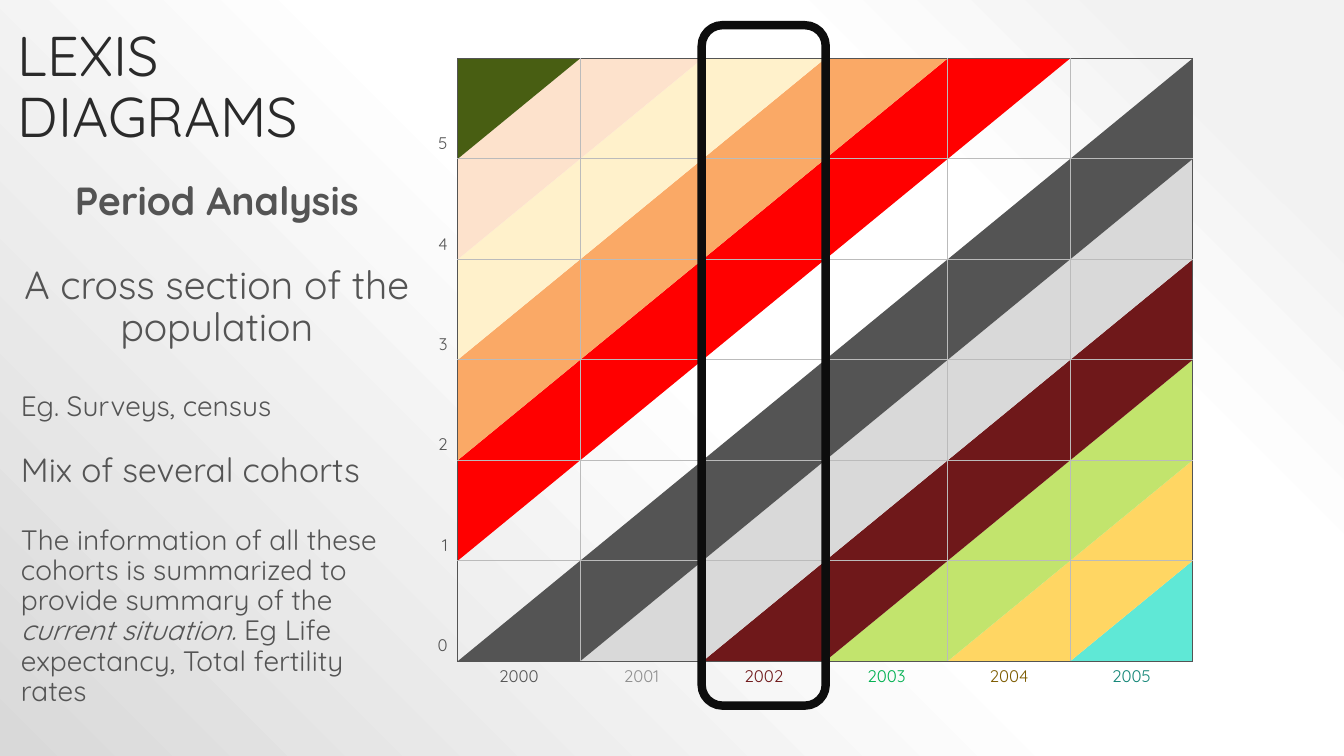
"""Build the Lexis diagram slide on period analysis."""
import lxml.etree
import pptx
import pptx.dml.color
import pptx.enum.shapes
import pptx.enum.text
import pptx.oxml
import pptx.oxml.ns
import pptx.util

Inches, Pt = pptx.util.Inches, pptx.util.Pt
RGBColor = pptx.dml.color.RGBColor
ALIGN, ANCHOR = pptx.enum.text.PP_ALIGN, pptx.enum.text.MSO_ANCHOR
SHAPE = pptx.enum.shapes.MSO_SHAPE
qn = pptx.oxml.ns.qn

FONT = "Quicksand"
INK = RGBColor(0x2A, 0x2A, 0x2A)
GREY = RGBColor(0x54, 0x54, 0x54)
LIGHT = RGBColor(0xBB, 0xBB, 0xBB)
SILVER = RGBColor(0x8F, 0x8F, 0x8F)
PALE = RGBColor(0xD9, 0xD9, 0xD9)
MAROON = RGBColor(0x6F, 0x18, 0x1A)
GREEN = RGBColor(0x00, 0xB0, 0x50)
BROWN = RGBColor(0x7D, 0x5C, 0x00)
TEAL = RGBColor(0x13, 0x86, 0x77)
LIME = RGBColor(0xC2, 0xE4, 0x6D)
YELLOW = RGBColor(0xFF, 0xD6, 0x63)
AQUA = RGBColor(0x5F, 0xE8, 0xD6)
RED = RGBColor(0xFF, 0x00, 0x00)
ORANGE = RGBColor(0xFA, 0xA9, 0x66)
CREAM = RGBColor(0xFF, 0xF1, 0xCB)
PEACH = RGBColor(0xFD, 0xE2, 0xCC)
OLIVE = RGBColor(0x48, 0x5E, 0x12)
BLACK = RGBColor(0x0D, 0x0D, 0x0D)

TITLE = ["LEXIS ", "DIAGRAMS"]
POINTS = [
    (["Period Analysis"], 28, 0, ALIGN.CENTER),
    (["A cross section of the population"], 28, 30, ALIGN.CENTER),
    (["Eg. Surveys, census"], 20, 30, ALIGN.LEFT),
    (["Mix of several cohorts"], 24, 22, ALIGN.LEFT),
    (["The information of all these cohorts is summarized to provide summary of the ",
      "current situation. ", "Eg Life expectancy, Total fertility rates"],
     20, 26, ALIGN.LEFT),
]
YEARS = [("2000", GREY), ("2001", SILVER), ("2002", MAROON),
         ("2003", GREEN), ("2004", BROWN), ("2005", TEAL)]
AGES = ["5", "4", "3", "2", "1", "0"]
COHORTS = {-6: OLIVE, -5: PEACH, -4: CREAM, -3: ORANGE, -2: RED, 0: GREY,
           1: PALE, 2: MAROON, 3: LIME, 4: YELLOW, 5: AQUA}
BACKDROP = [(10, "F2F2F2"), (28, "FFFFFF"), (48, "FFFFFF"), (100, "D9D9D9")]

TABLE_LEFT, GRID_LEFT, GRID_TOP = Inches(4.08), Inches(4.54), Inches(0.58)
YEAR_WIDTH = Inches(7.29) // len(YEARS)
AGE_HEIGHT = Inches(5.98) // len(AGES)
YEAR_LABEL_HEIGHT = Inches(0.41)


def write(paragraph, text, size=12, color=GREY, bold=False, italic=False,
          align=ALIGN.LEFT, spacing=None, gap=0):
    """Append a formatted run to a paragraph."""
    paragraph.alignment = align
    if spacing:
        paragraph.line_spacing = spacing
    if gap:
        paragraph.space_before = Pt(gap)
    run = paragraph.add_run()
    run.text = text
    run.font.name, run.font.size = FONT, Pt(size)
    run.font.bold, run.font.italic = bold, italic
    run.font.color.rgb = color


def text_frame(slide, left, top, width, height):
    """Add a wrapping text box and return its frame."""
    frame = slide.shapes.add_textbox(
        Inches(left), Inches(top), Inches(width), Inches(height)).text_frame
    frame.word_wrap = True
    return frame


def paint_backdrop(slide):
    """Give the slide a radial gradient centred on the top right corner."""
    slide.background.fill.solid()
    stops = "".join(f'<a:gs pos="{at * 1000}"><a:srgbClr val="{color}"/></a:gs>'
                    for at, color in BACKDROP)
    gradient = pptx.oxml.parse_xml(
        f'<a:gradFill {pptx.oxml.ns.nsdecls("a")} rotWithShape="1"><a:gsLst>{stops}</a:gsLst>'
        '<a:path path="circle"><a:fillToRect l="100000" b="100000"/></a:path></a:gradFill>')
    properties = slide.element.find(".//" + qn("p:bgPr"))
    properties.replace(properties[0], gradient)


def add_triangle(slide, year, age, flip, color):
    """Fill one half of a year-by-age square."""
    triangle = slide.shapes.add_shape(
        SHAPE.RIGHT_TRIANGLE, GRID_LEFT + year * YEAR_WIDTH,
        GRID_TOP + (len(AGES) - 1 - age) * AGE_HEIGHT, YEAR_WIDTH, AGE_HEIGHT)
    triangle.element.spPr.find(qn("a:xfrm")).set(flip, "1")
    triangle.shadow.inherit = False
    triangle.fill.solid()
    triangle.fill.fore_color.rgb = color
    triangle.line.fill.background()


def edge_line(boundary, first, last, crosses_grid):
    """Return colour and width of a grid line, or None outside the grid."""
    if not crosses_grid or not first <= boundary <= last:
        return None
    return (GREY, 1) if boundary in (first, last) else (LIGHT, 0.75)


def set_borders(cell, row, column):
    """Draw the four borders of a cell by its place in the grid."""
    beside, below = row < len(AGES), column > 0
    lines = {
        "lnL": edge_line(column, 1, len(YEARS) + 1, beside),
        "lnR": edge_line(column + 1, 1, len(YEARS) + 1, beside),
        "lnT": edge_line(row, 0, len(AGES), below),
        "lnB": edge_line(row + 1, 0, len(AGES), below),
    }
    properties = cell._tc.get_or_add_tcPr()
    for place, (tag, line) in enumerate(lines.items()):
        border = lxml.etree.Element(qn("a:" + tag))
        if line:
            border.set("w", str(Pt(line[1])))
            fill = lxml.etree.SubElement(border, qn("a:solidFill"))
            lxml.etree.SubElement(fill, qn("a:srgbClr")).set("val", str(line[0]))
        else:
            lxml.etree.SubElement(border, qn("a:noFill"))
        properties.insert(place, border)


def add_grid(slide):
    """Add the table of ages and years."""
    label_width = GRID_LEFT - TABLE_LEFT
    grid = slide.shapes.add_table(
        len(AGES) + 1, len(YEARS) + 1, TABLE_LEFT, GRID_TOP,
        label_width + len(YEARS) * YEAR_WIDTH,
        len(AGES) * AGE_HEIGHT + YEAR_LABEL_HEIGHT).table
    grid.first_row = grid.horz_banding = False
    for column, width in enumerate([label_width] + [YEAR_WIDTH] * len(YEARS)):
        grid.columns[column].width = width
    for row, height in enumerate([AGE_HEIGHT] * len(AGES) + [YEAR_LABEL_HEIGHT]):
        grid.rows[row].height = height
        for column in range(len(YEARS) + 1):
            cell = grid.cell(row, column)
            cell.fill.background()
            set_borders(cell, row, column)
    for row, age in enumerate(AGES):
        cell = grid.cell(row, 0)
        cell.vertical_anchor = ANCHOR.BOTTOM
        write(cell.text_frame.paragraphs[0], age, align=ALIGN.RIGHT)
    for column, (year, color) in enumerate(YEARS, 1):
        write(grid.cell(len(AGES), column).text_frame.paragraphs[0], year,
              color=color, align=ALIGN.CENTER)


def main():
    """Assemble and save the slide."""
    deck = pptx.Presentation()
    deck.slide_width, deck.slide_height = Inches(13.33), Inches(7.5)
    slide = deck.slides.add_slide(deck.slide_layouts[6])
    paint_backdrop(slide)

    title = text_frame(slide, 0.08, 0.08, 3.33, 1.45)
    title.vertical_anchor = ANCHOR.BOTTOM
    for place, line in enumerate(TITLE):
        if place:
            title.paragraphs[0].add_line_break()
        write(title.paragraphs[0], line, size=40, color=INK, spacing=0.9)

    body = text_frame(slide, 0.11, 1.75, 4.08, 5.37)
    for place, (pieces, size, gap, align) in enumerate(POINTS):
        paragraph = body.add_paragraph() if place else body.paragraphs[0]
        for part, piece in enumerate(pieces):
            write(paragraph, piece, size=size, bold=place == 0, italic=part == 1,
                  align=align, spacing=0.9, gap=gap)

    for year in range(len(YEARS)):
        for age in range(len(AGES)):
            for flip, cohort in (("flipH", year - age), ("flipV", year - age - 1)):
                if cohort in COHORTS:
                    add_triangle(slide, year, age, flip, COHORTS[cohort])
    add_grid(slide)

    period = slide.shapes.add_shape(
        SHAPE.ROUNDED_RECTANGLE, Inches(6.96), Inches(0.25), Inches(1.23), Inches(6.75))
    period.shadow.inherit = False
    period.fill.background()
    period.line.color.rgb, period.line.width = BLACK, Pt(6)
    deck.save("out.pptx")


if __name__ == "__main__":
    main()
